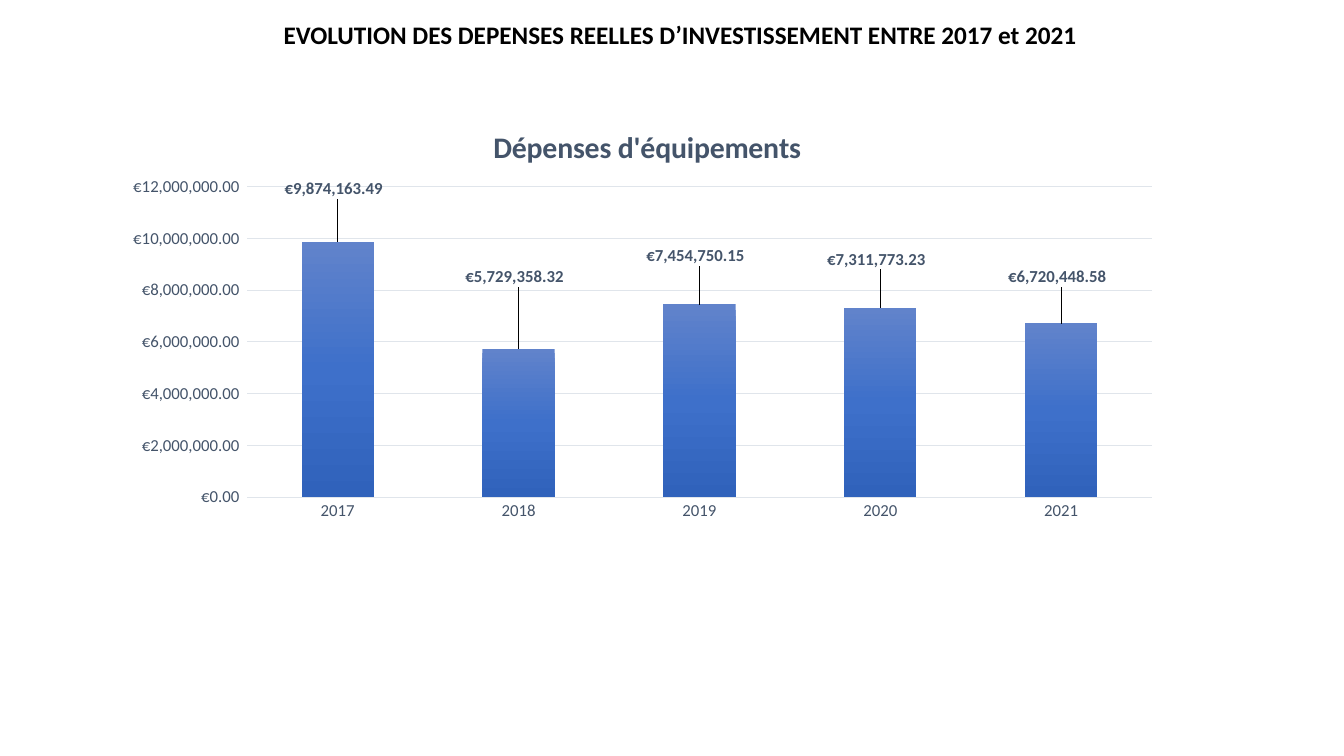
from lxml import etree
from pptx import Presentation
from pptx.chart.data import CategoryChartData
from pptx.dml.color import RGBColor
from pptx.enum.chart import XL_CHART_TYPE, XL_LABEL_POSITION, XL_TICK_MARK
from pptx.enum.text import MSO_ANCHOR, PP_ALIGN
from pptx.oxml import parse_xml
from pptx.oxml.ns import nsdecls, qn
from pptx.util import Cm, Pt

COLUMN = XL_CHART_TYPE.COLUMN_CLUSTERED
OUTSIDE_END = XL_LABEL_POSITION.OUTSIDE_END
NO_TICK = XL_TICK_MARK.NONE
MIDDLE = MSO_ANCHOR.MIDDLE
CENTER = PP_ALIGN.CENTER

FONT = "Calibri"
COLORS = {"title": "000000", "text": "44546A", "grid": "E0E5EB",
          "bar_top": "6183CB", "bar_middle": "3E70CA", "bar_bottom": "3062BB"}
EURO_FORMAT = '"€"#,##0.00_);[Red]\\("€"#,##0.00\\)'
SPENDING = {"2017": 9874163.49, "2018": 5729358.32, "2019": 7454750.15,
            "2020": 7311773.23, "2021": 6720448.58}
LABEL_RISES = [0.09, 0.135, 0.08, 0.08, 0.075]


def style_font(font, size, color, bold=False):
    """Set the typeface, size, colour and weight of a font."""
    font.name = FONT
    font.size = Pt(size)
    font.bold = bold
    font.color.rgb = RGBColor.from_string(COLORS[color])


def style_line(line):
    """Give a line the thin grid style."""
    line.color.rgb = RGBColor.from_string(COLORS["grid"])
    line.width = Pt(0.75)


def set_layout(parent, index, **settings):
    """Place a chart part by a manual layout in fractions of the chart."""
    for old in parent.findall(qn("c:layout")):
        parent.remove(old)
    layout = etree.Element(qn("c:layout"))
    manual = etree.SubElement(layout, qn("c:manualLayout"))
    for name, value in settings.items():
        etree.SubElement(manual, qn(f"c:{name}")).set("val", str(value))
    parent.insert(index, layout)


def fill_gradient(series):
    """Fill the bars with a vertical three-colour gradient."""
    stops = "".join(
        f'<a:gs pos="{i * 50000}"><a:srgbClr val="{COLORS[name]}"/></a:gs>'
        for i, name in enumerate(["bar_top", "bar_middle", "bar_bottom"]))
    series.format.fill.background()
    sp_pr = series.format.fill._xPr
    sp_pr.replace(sp_pr.find(qn("a:noFill")), parse_xml(
        f'<a:gradFill {nsdecls("a")} rotWithShape="1"><a:gsLst>{stops}</a:gsLst>'
        '<a:lin ang="5400000" scaled="0"/></a:gradFill>'))


def add_title(slide, left, top, width, height):
    """Place and format the slide title."""
    sp = slide.shapes.title
    sp.left, sp.top, sp.width, sp.height = left, top, width, height
    tf = sp.text_frame
    tf.text = "EVOLUTION DES DEPENSES REELLES D’INVESTISSEMENT ENTRE 2017 et 2021"
    tf.word_wrap = True
    tf.vertical_anchor = MIDDLE
    p = tf.paragraphs[0]
    p.alignment = CENTER
    style_font(p.runs[0].font, 18, "title", True)


def style_axes(chart):
    """Format both axes and the gridlines."""
    for axis in (chart.category_axis, chart.value_axis):
        axis.major_tick_mark = axis.minor_tick_mark = NO_TICK
        style_font(axis.tick_labels.font, 12, "text")
    style_line(chart.category_axis.format.line)
    values = chart.value_axis
    values.minimum_scale, values.maximum_scale = 0, 12000000
    values.major_unit = 2000000
    values.format.line.fill.background()
    values.has_major_gridlines = True
    style_line(values.major_gridlines.format.line)
    values.tick_labels.number_format = EURO_FORMAT
    values.tick_labels.number_format_is_linked = False


def style_labels(series):
    """Show the values, raised above their bars."""
    labels = series.data_labels
    labels.show_value = True
    labels.position = OUTSIDE_END
    labels.number_format = EURO_FORMAT
    labels.number_format_is_linked = False
    style_font(labels.font, 12, "text", True)
    for i, rise in enumerate(LABEL_RISES):
        label = series.points[i].data_label
        style_font(label.font, 12, "text", True)
        label.position = OUTSIDE_END
        d_lbl = labels._element.findall(qn("c:dLbl"))[i]
        set_layout(d_lbl, 1, x=-0.002, y=-rise)


def add_spending_chart(slide, left, top, width, height):
    """Draw the yearly equipment spending as columns."""
    data = CategoryChartData(number_format=EURO_FORMAT)
    data.categories = list(SPENDING)
    data.add_series("Dépenses d'équipements", list(SPENDING.values()))
    chart = slide.shapes.add_chart(COLUMN, left, top, width, height, data).chart
    style_font(chart.font, 10, "title")
    chart.has_legend = False
    chart.has_title = True
    tf = chart.chart_title.text_frame
    tf.text = "Dépenses d'équipements"
    style_font(tf.paragraphs[0].runs[0].font, 21.3, "text", True)
    set_layout(chart.chart_title._element, 1,
               xMode="edge", yMode="edge", x=0.354, y=0.05)
    plot = chart.plots[0]
    plot.gap_width = 150
    plot.vary_by_categories = False
    set_layout(plot._element.getparent(), 0, layoutTarget="inner",
               xMode="edge", yMode="edge", x=0.127, y=0.203, w=0.853, h=0.723)
    style_axes(chart)
    fill_gradient(plot.series[0])
    style_labels(plot.series[0])


def main():
    """Build and save the presentation."""
    prs = Presentation()
    prs.slide_width, prs.slide_height = Cm(33.87), Cm(19.05)
    slide = prs.slides.add_slide(prs.slide_layouts[5])
    add_title(slide, Cm(3.15), Cm(0.36), Cm(27.99), Cm(1.02))
    add_spending_chart(slide, Cm(2.84), Cm(2.51), Cm(26.72), Cm(10.82))
    prs.save("out.pptx")


if __name__ == "__main__":
    main()
